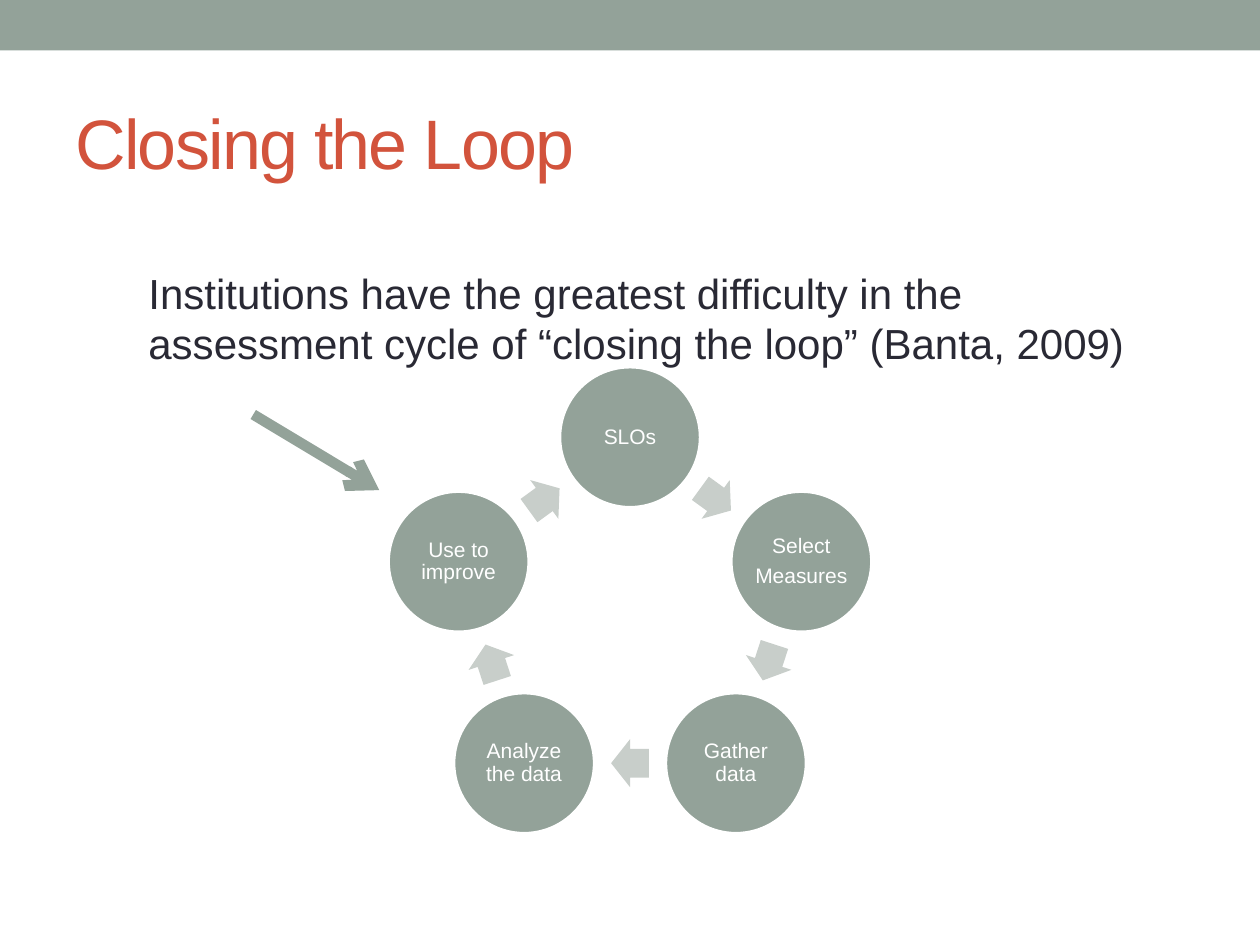
"""Builds the "Closing the Loop" slide with its five-step assessment cycle."""
import math

import pptx
import pptx.dml.color
import pptx.enum.shapes
import pptx.enum.text
import pptx.oxml.ns
import pptx.util
from lxml import etree

TITLE = "Closing the Loop"
STATEMENT = ("Institutions have the greatest difficulty in the assessment cycle "
             "of “closing the loop” (Banta, 2009)")
STEPS = [["SLOs"], ["Select", "Measures"], ["Gather data"],
         ["Analyze the data"], ["Use to improve"]]

SAGE, PALE, WHITE, RED, INK = "93A299", "C8CECA", "FFFFFF", "D2533C", "292934"
WIDTH, HEIGHT = 10, 7.5
CENTRE_X, CENTRE_Y, RADIUS = WIDTH / 2, 4.9, 1.43
DIAMETER = 1.12
ARROW_WIDTH, ARROW_HEIGHT = 0.3, 0.38

SHAPES = pptx.enum.shapes.MSO_SHAPE
ALIGN = pptx.enum.text.PP_ALIGN
ANCHOR = pptx.enum.text.MSO_ANCHOR


def colour(hex_string):
    return pptx.dml.color.RGBColor.from_string(hex_string)


def inches(*lengths):
    return [pptx.util.Inches(length) for length in lengths]


def write(shape, lines, size, ink, align=ALIGN.LEFT, anchor=ANCHOR.TOP,
          inset=None, line_spacing=None, space_after=0, tracking=None):
    frame = shape.text_frame
    frame.word_wrap = True
    frame.vertical_anchor = anchor
    if inset is not None:
        frame.margin_left = frame.margin_right = pptx.util.Inches(inset)
        frame.margin_top = frame.margin_bottom = pptx.util.Inches(inset)
    for index, line in enumerate(lines):
        paragraph = frame.add_paragraph() if index else frame.paragraphs[0]
        paragraph.alignment = align
        paragraph.line_spacing = line_spacing
        paragraph.space_after = pptx.util.Pt(space_after)
        run = paragraph.add_run()
        run.text = line
        run.font.name = "Arial"
        run.font.size = pptx.util.Pt(size)
        run.font.color.rgb = colour(ink)
        if tracking is not None:
            run.font._element.set("spc", str(tracking * 100))


def add_filled(slide, kind, x, y, width, height, fill, outline=None):
    shape = slide.shapes.add_shape(kind, *inches(x, y, width, height))
    shape.shadow.inherit = False
    shape.fill.solid()
    shape.fill.fore_color.rgb = colour(fill)
    if outline:
        shape.line.color.rgb = colour(outline)
        shape.line.width = pptx.util.Pt(2.08)
    else:
        shape.line.fill.background()
    return shape


def on_ring(position, radius):
    angle = math.tau * position / len(STEPS)
    return CENTRE_X + radius * math.sin(angle), CENTRE_Y - radius * math.cos(angle)


def add_cycle(slide):
    turn = 360 / len(STEPS)
    arrow_radius = RADIUS * math.cos(math.pi / len(STEPS))
    for index, lines in enumerate(STEPS):
        x, y = on_ring(index, RADIUS)
        step = add_filled(slide, SHAPES.OVAL, x - DIAMETER / 2, y - DIAMETER / 2,
                          DIAMETER, DIAMETER, SAGE, WHITE)
        write(step, lines, 12, WHITE, align=ALIGN.CENTER, anchor=ANCHOR.MIDDLE,
              inset=0.02, line_spacing=0.9, space_after=4.2)
        x, y = on_ring(index + 0.5, arrow_radius)
        arrow = add_filled(slide, SHAPES.RIGHT_ARROW, x - ARROW_WIDTH / 2,
                           y - ARROW_HEIGHT / 2, ARROW_WIDTH, ARROW_HEIGHT, PALE)
        arrow.adjustments[0] = 0.6
        arrow.adjustments[1] = 0.5
        arrow.rotation = turn * (index + 0.5)


def add_pointer(slide):
    pointer = slide.shapes.add_connector(
        pptx.enum.shapes.MSO_CONNECTOR.STRAIGHT, *inches(2.01, 3.29, 3.01, 3.89))
    pointer.line.color.rgb = colour(SAGE)
    pointer.line.width = pptx.util.Pt(6)
    qn = pptx.oxml.ns.qn
    etree.SubElement(pointer.line._get_or_add_ln(), qn("a:tailEnd"), type="arrow")
    etree.SubElement(pointer._element.spPr, qn("a:effectLst"))


def main():
    deck = pptx.Presentation()
    deck.slide_width, deck.slide_height = inches(WIDTH, HEIGHT)
    slide = deck.slides.add_slide(deck.slide_layouts[6])
    add_filled(slide, SHAPES.RECTANGLE, 0, 0, WIDTH, 0.4, SAGE)
    add_cycle(slide)
    add_pointer(slide)
    statement = slide.shapes.add_textbox(*inches(1.08, 2.09, 7.97, 0.9))
    write(statement, [STATEMENT], 24, INK, line_spacing=0.99)
    title = slide.shapes.add_textbox(*inches(0.5, 0.58, 9, 1.08))
    write(title, [TITLE], 40, RED, anchor=ANCHOR.MIDDLE, tracking=-1)
    deck.save("out.pptx")


if __name__ == "__main__":
    main()
